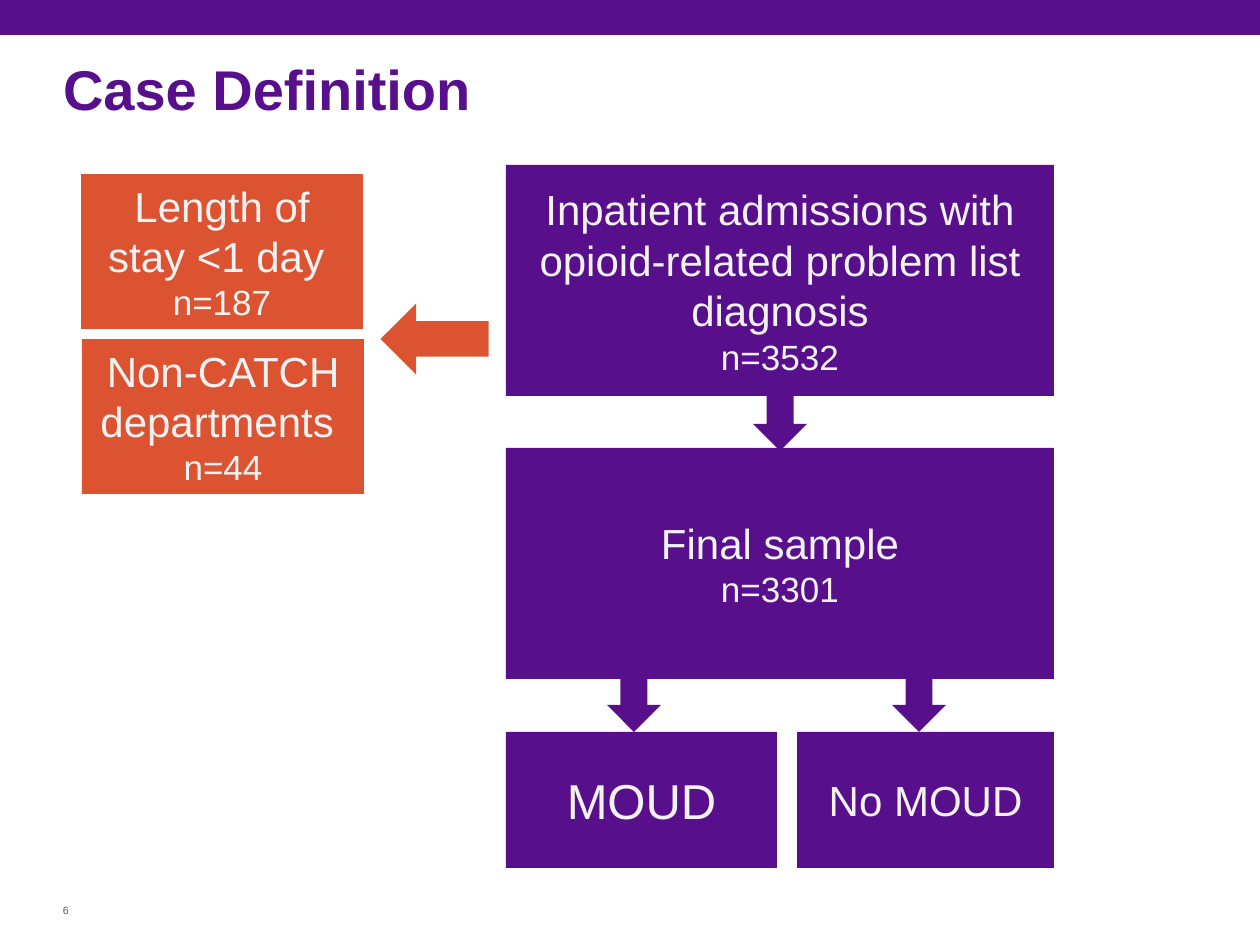
from pptx import Presentation
from pptx import util as u
from pptx.dml.color import RGBColor
from pptx.enum import shapes, text

PX = 914400 / 126
PURPLE, ORANGE, PALE, GREY = "580F8B", "DB5330", "F2F2F2", "53565A"
RECT = shapes.MSO_SHAPE.RECTANGLE
ARROW = shapes.MSO_SHAPE.DOWN_ARROW

TITLE = "Case Definition"
PAGE_NUMBER = "6"

# Boxes: position and size in px, fill, lines of (wording, points)
FLOW_LEFT, FLOW_WIDTH, FLOW_HEIGHT = 506, 548, 231
BOXES = [
    ((81, 174, 282, 155), ORANGE, [("Length of stay <1 day ", 24), ("n=187", 20)]),
    ((82, 339, 282, 155), ORANGE, [("Non-CATCH departments ", 24), ("n=44", 20)]),
    ((FLOW_LEFT, 165, FLOW_WIDTH, FLOW_HEIGHT), PURPLE,
     [("Inpatient admissions with opioid-related problem list diagnosis", 24),
      ("n=3532", 20)]),
    ((FLOW_LEFT, 448, FLOW_WIDTH, FLOW_HEIGHT), PURPLE,
     [("Final sample", 24), ("n=3301", 20)]),
    ((FLOW_LEFT, 732, 271, 136), PURPLE, [("MOUD", 28)]),
    ((797, 732, 257, 136), PURPLE, [("No MOUD", 24)]),
]

# Down arrows between the flow boxes: centre x and tip y
ARROW_WIDTH, ARROW_HEIGHT = 54, 73
ARROW_TIPS = [(780, 451), (634, 732), (919, 732)]


def color(value):
    return RGBColor.from_string(value)


def emu(lengths):
    return [u.Emu(round(length * PX)) for length in lengths]


def add_filled(page, kind, place, fill):
    shape = page.shapes.add_shape(kind, *emu(place))
    shape.shadow.inherit = False
    shape.fill.solid()
    shape.fill.fore_color.rgb = color(fill)
    shape.line.fill.background()
    return shape


def write(box, lines, ink, align, frame_format, bold=False, spacing=None):
    frame = box.text_frame
    for name, value in frame_format.items():
        setattr(frame, name, value)
    for index, (wording, points) in enumerate(lines):
        para = frame.add_paragraph() if index else frame.paragraphs[0]
        para.alignment = align
        para.line_spacing = spacing
        span = para.add_run()
        span.text = wording
        font = {"name": "Arial", "size": u.Pt(points), "bold": bold}
        for name, value in font.items():
            setattr(span.font, name, value)
        span.font.color.rgb = color(ink)


def main():
    deck = Presentation()
    deck.slide_width, deck.slide_height = emu((1260, 945))
    page = deck.slides.add_slide(deck.slide_layouts[5])

    left, center = text.PP_ALIGN.LEFT, text.PP_ALIGN.CENTER
    middle = {"vertical_anchor": text.MSO_ANCHOR.MIDDLE, "word_wrap": True}
    flush = dict.fromkeys(
        ("margin_left", "margin_top", "margin_right", "margin_bottom"), 0)

    # Top band
    add_filled(page, RECT, (0, 0, 1260, 35), PURPLE)

    # Title
    title = page.shapes.title
    title.left, title.top, title.width, title.height = emu((63, 79, 1134, 43))
    title_format = {**flush, "vertical_anchor": text.MSO_ANCHOR.BOTTOM,
                    "word_wrap": True, "auto_size": text.MSO_AUTO_SIZE.NONE}
    write(title, [(TITLE, 32)], PURPLE, left, title_format, True, 0.85)

    # Page number
    number = page.shapes.add_textbox(*emu((63, 904, 35, 12)))
    write(number, [(PAGE_NUMBER, 6)], GREY, left, {**middle, **flush})

    # Boxes
    for place, fill, lines in BOXES:
        box = add_filled(page, RECT, place, fill)
        write(box, lines, PALE, center, middle)

    # Arrows down the flow
    for x, tip in ARROW_TIPS:
        place = (x - ARROW_WIDTH / 2, tip - ARROW_HEIGHT, ARROW_WIDTH, ARROW_HEIGHT)
        add_filled(page, ARROW, place, PURPLE)

    # Arrow to the exclusions
    exclusion = add_filled(page, ARROW, (399, 285, 71, 108), ORANGE)
    exclusion.rotation = 90

    deck.save("out.pptx")


if __name__ == "__main__":
    main()
